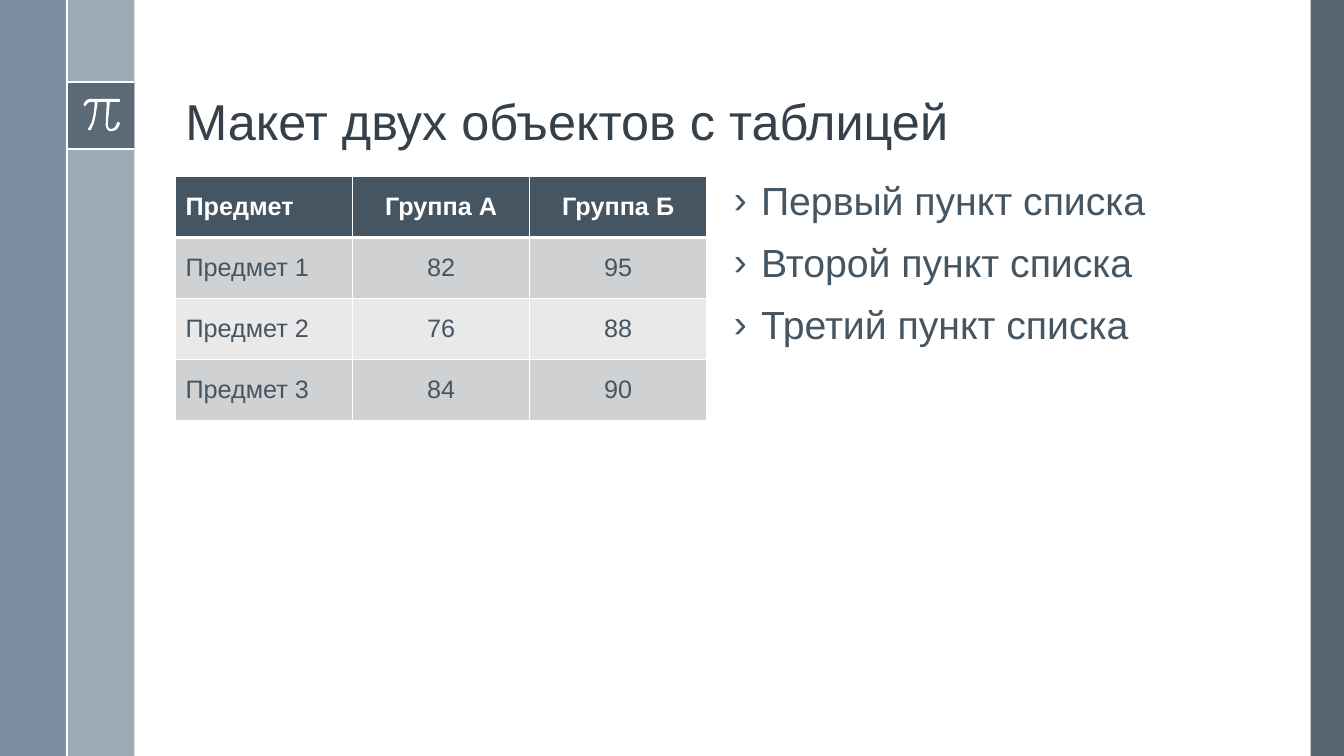
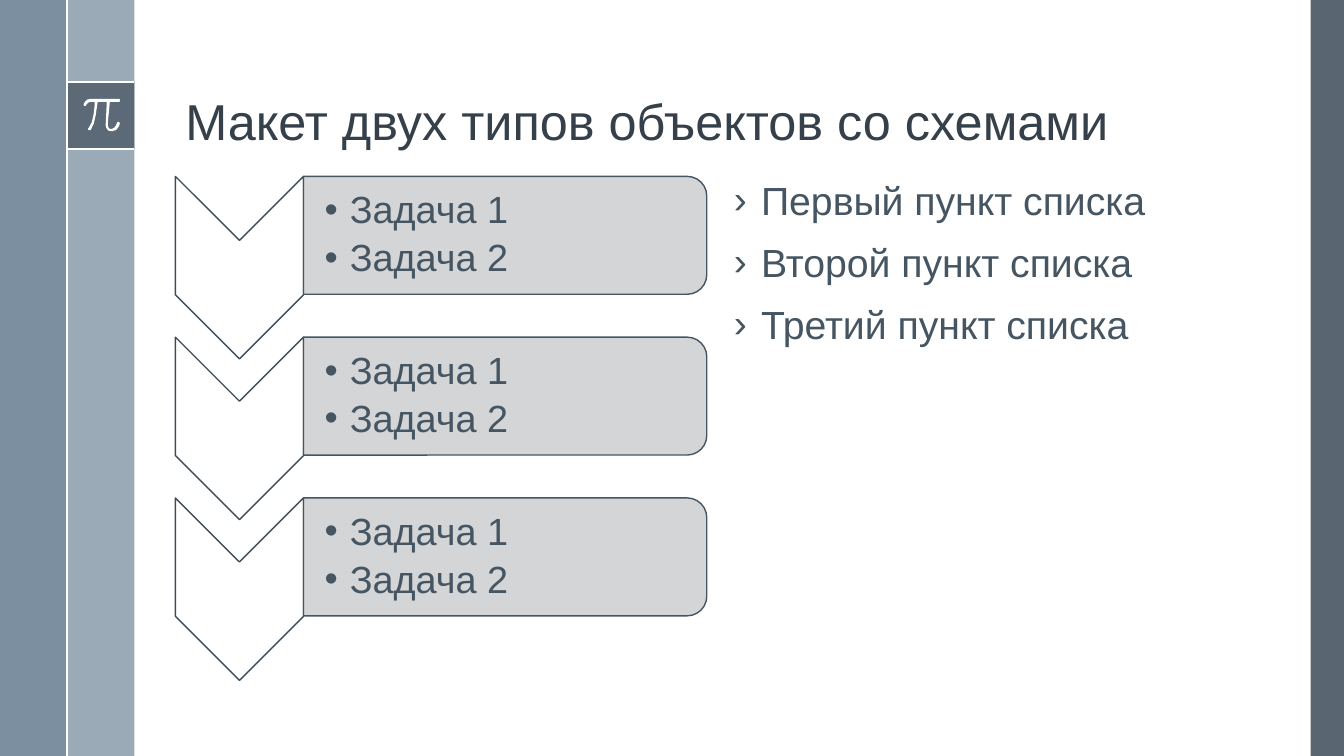
from lxml.etree import SubElement
from pptx import Presentation
from pptx.dml.color import RGBColor
from pptx.enum.shapes import MSO_CONNECTOR, MSO_SHAPE
from pptx.enum.text import MSO_ANCHOR, PP_ALIGN
from pptx.oxml.ns import qn
from pptx.util import Inches, Pt

WIDTH, HEIGHT = 13.33, 7.5
FONT = "Arial"
WHITE, SLATE, INK = "FFFFFF", "465562", "35404A"
EDGE, PALE, BLUE = "475562", "9BAAB7", "6A8093"
GREY, LIGHT, OUTLINE = "CFD1D3", "E9E9EA", "404D59"

TITLES = ("Макет двух объектов с таблицей", "Макет двух типов объектов со схемами")
POINTS = ("Первый пункт списка", "Второй пункт списка", "Третий пункт списка")
SCORES = (
    ("Предмет", "Группа А", "Группа Б"),
    ("Предмет 1", "82", "95"),
    ("Предмет 2", "76", "88"),
    ("Предмет 3", "84", "90"),
)
TASKS = (("Задача 1", "Задача 2"),) * 3

STRIP = WIDTH / 20
BADGE_TOP = 0.81
LEFT, TOP, COLUMN, BODY = 1.74, 1.75, 5.27, 5
RIGHT = 7.18
ROW = 0.605

# left, top, width, height, colour, opacity in percent
BANDS = (
    (13, 0, WIDTH - 13, HEIGHT, EDGE, 90),
    (STRIP, 0, STRIP, HEIGHT, PALE, 100),
    (0, 0, STRIP, HEIGHT, BLUE, 88),
    (STRIP, BADGE_TOP, STRIP, STRIP, EDGE, 75),
)
RULES = (
    (STRIP, BADGE_TOP, 2 * STRIP, BADGE_TOP),
    (STRIP, BADGE_TOP + STRIP, 2 * STRIP, BADGE_TOP + STRIP),
    (STRIP, 0, STRIP, HEIGHT),
)
# Pi outline: one point makes a straight edge, three points a Bezier curve
PI_START = (1.18, 0.98)
PI_EDGES = (
    ((0.9, 0.98),),
    ((0.85, 0.98), (0.83, 1.03), (0.83, 1.04)),
    ((0.83, 1.04), (0.83, 1.05), (0.84, 1.05)),
    ((0.85, 1.05),),
    ((0.85, 1.05), (0.87, 1.01), (0.9, 1.01)),
    ((0.94, 1.01),),
    ((0.94, 1.05), (0.93, 1.22), (0.88, 1.27)),
    ((0.87, 1.28), (0.87, 1.28), (0.88, 1.29)),
    ((0.9, 1.29),),
    ((0.95, 1.23), (0.96, 1.05), (0.97, 1.01)),
    ((1.06, 1.01),),
    ((1.05, 1.22),),
    ((1.05, 1.22), (1.04, 1.26), (1.07, 1.29)),
    ((1.08, 1.3), (1.09, 1.3), (1.1, 1.3)),
    ((1.11, 1.3), (1.11, 1.3), (1.12, 1.3)),
    ((1.17, 1.3), (1.19, 1.23), (1.19, 1.22)),
    ((1.19, 1.22), (1.18, 1.21), (1.18, 1.21)),
    ((1.17, 1.21), (1.16, 1.21), (1.16, 1.22)),
    ((1.16, 1.22), (1.15, 1.27), (1.11, 1.28)),
    ((1.1, 1.28), (1.09, 1.28), (1.08, 1.27)),
    ((1.07, 1.26), (1.07, 1.23), (1.07, 1.22)),
    ((1.09, 1.01),),
    ((1.18, 1.01),),
    ((1.19, 1.01), (1.19, 1), (1.19, 1)),
    ((1.19, 0.99), (1.19, 0.98), (1.18, 0.98)),
)

TITLE_STYLE = dict(size=36, color=INK)
POINT_STYLE = dict(size=28, color=SLATE, bullet="›", indent=0.27, space_before=Pt(14))
TASK_STYLE = dict(size=27, color=SLATE, bullet="•", indent=0.25, space_after=Pt(5))


def rgb(code):
    return RGBColor.from_string(code)


def inches(*lengths):
    return [Inches(length) for length in lengths]


def paint(shape, color, opacity=100, outline=None):
    shape.shadow.inherit = False
    shape.fill.solid()
    shape.fill.fore_color.rgb = rgb(color)
    if opacity < 100:
        tone = shape._element.spPr.find(".//" + qn("a:srgbClr"))
        SubElement(tone, qn("a:alpha"), val=str(opacity * 1000))
    if outline:
        shape.line.color.rgb = rgb(outline)
        shape.line.width = Pt(1)
    else:
        shape.line.fill.background()


def write(para, text, size, color, bold=False, bullet=None, indent=0, **spacing):
    for name, value in spacing.items():
        setattr(para, name, value)
    if bullet:
        props = para._p.get_or_add_pPr()
        props.set("marL", str(Inches(indent)))
        props.set("indent", str(-Inches(indent)))
        SubElement(props, qn("a:buFont"), typeface=FONT)
        SubElement(props, qn("a:buChar"), char=bullet)
    span = para.add_run()
    span.text = text
    for name, value in dict(name=FONT, size=Pt(size), bold=bold).items():
        setattr(span.font, name, value)
    span.font.color.rgb = rgb(color)


def add_text(page, area, lines, style, anchor=MSO_ANCHOR.TOP, margins=(0.1, 0.05, 0.1, 0.05)):
    frame = page.shapes.add_textbox(*inches(*area)).text_frame
    frame.word_wrap = True
    frame.vertical_anchor = anchor
    for side, margin in zip(("left", "top", "right", "bottom"), margins):
        setattr(frame, "margin_" + side, Inches(margin))
    for index, line in enumerate(lines):
        para = frame.add_paragraph() if index else frame.paragraphs[0]
        write(para, line, line_spacing=0.9, **style)


def add_pi(page):
    outline, current = [], PI_START
    for edge in PI_EDGES:
        if len(edge) == 1:
            outline.append(edge[0])
        else:
            for t in (0.25, 0.5, 0.75, 1):
                weights = ((1 - t) ** 3, 3 * t * (1 - t) ** 2, 3 * t * t * (1 - t), t ** 3)
                outline.append([sum(w * v for w, v in zip(weights, axis))
                                for axis in zip(current, *edge)])
        current = edge[-1]
    builder = page.shapes.build_freeform(*inches(*PI_START))
    builder.add_line_segments([inches(*point) for point in outline])
    paint(builder.convert_to_shape(), WHITE)


def add_page(deck, title):
    """Add a slide with the bands, badge, title and list that all slides share."""
    page = deck.slides.add_slide(deck.slide_layouts[6])
    for *area, color, opacity in BANDS:
        band = page.shapes.add_shape(MSO_SHAPE.RECTANGLE, *inches(*area))
        paint(band, color, opacity)
    for ends in RULES:
        rule = page.shapes.add_connector(MSO_CONNECTOR.STRAIGHT, *inches(*ends))
        rule.line.color.rgb = rgb(WHITE)
        rule.line.width = Pt(1.5)
        SubElement(rule._element.spPr, qn("a:effectLst"))
    add_pi(page)
    add_text(page, (LEFT, 0.19, 10.7, 1.36), [title], TITLE_STYLE, MSO_ANCHOR.BOTTOM)
    add_text(page, (RIGHT, TOP, COLUMN, BODY), POINTS, POINT_STYLE)
    return page


def add_borders(cell, **widths):
    props = cell._tc.get_or_add_tcPr()
    for side in "LRTB":
        border = SubElement(props, qn("a:ln" + side), w=str(Pt(widths.get(side, 1))))
        SubElement(SubElement(border, qn("a:solidFill")), qn("a:srgbClr"), val=WHITE)


def add_scores(page):
    rows, columns = len(SCORES), len(SCORES[0])
    area = inches(LEFT, TOP, COLUMN, ROW * rows)
    table = page.shapes.add_table(rows, columns, *area).table
    for row, values in enumerate(SCORES):
        table.rows[row].height = Inches(ROW)
        header = row == 0
        for column, value in enumerate(values):
            table.columns[column].width = Inches(COLUMN / columns)
            cell = table.cell(row, column)
            add_borders(cell, T=3 if row == 1 else 1, B=3 if header else 1)
            cell.fill.solid()
            cell.fill.fore_color.rgb = rgb(SLATE if header else GREY if row % 2 else LIGHT)
            cell.vertical_anchor = MSO_ANCHOR.MIDDLE
            write(cell.text_frame.paragraphs[0], value, 18, WHITE if header else SLATE,
                  bold=header, alignment=PP_ALIGN.CENTER if column else PP_ALIGN.LEFT)


def add_turned(page, kind, left, top, width, height, *look):
    """Add a shape turned by 90 degrees that covers the given area."""
    shift = (width - height) / 2
    shape = page.shapes.add_shape(kind, *inches(left + shift, top - shift, height, width))
    shape.rotation = 90
    paint(shape, *look)


def add_tasks(page):
    arrow_width, arrow_height, panel_height = 1.27, 1.81, 1.17
    pitch = (BODY - arrow_height) / (len(TASKS) - 1)
    panel_left, panel_width = LEFT + arrow_width, COLUMN - arrow_width
    for index, tasks in enumerate(TASKS):
        top = TOP + index * pitch
        add_turned(page, MSO_SHAPE.CHEVRON, LEFT, top, arrow_width, arrow_height,
                   WHITE, 100, OUTLINE)
        add_turned(page, MSO_SHAPE.ROUND_2_SAME_RECTANGLE, panel_left, top,
                   panel_width, panel_height, GREY, 90, SLATE)
        add_text(page, (panel_left, top + 0.06, panel_width - 0.06, panel_height - 0.12),
                 tasks, TASK_STYLE, MSO_ANCHOR.MIDDLE, (0.21, 0.02, 0.02, 0.02))


def main():
    deck = Presentation()
    deck.slide_width, deck.slide_height = inches(WIDTH, HEIGHT)
    for title, add_content in zip(TITLES, (add_scores, add_tasks)):
        add_content(add_page(deck, title))
    deck.save("out.pptx")


if __name__ == "__main__":
    main()
